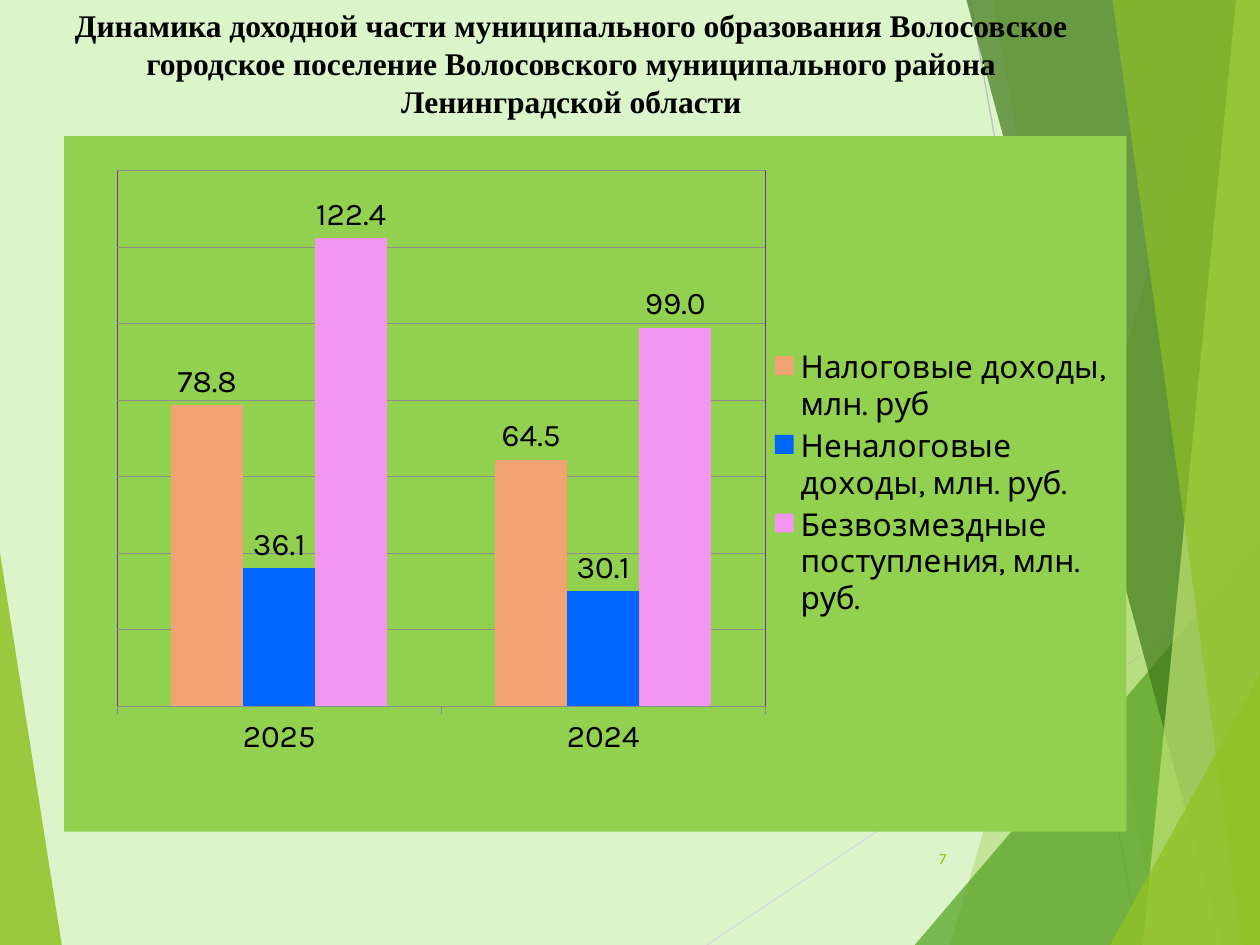
from lxml import etree
from pptx import Presentation
from pptx import util as u
from pptx.chart import data as cd
from pptx.dml.color import RGBColor
from pptx.enum import chart as ch, shapes as sh, text as tx
from pptx.oxml import ns

# Content
TITLE = ("Динамика доходной части муниципального образования Волосовское "
         "городское поселение Волосовского муниципального района "
         "Ленинградской области")
PAGE = "7"
YEARS = ["2025", "2024"]
SERIES = [
    ("Налоговые доходы, млн. руб", (78.8, 64.5), "F1A374"),
    ("Неналоговые доходы, млн. руб.", (36.1, 30.1), "0066FF"),
    ("Безвозмездные поступления, млн. руб.", (122.4, 99), "F296F2"),
]

THEME = {
    "back": "DBF4CA", "panel": "92D050", "ink": "000000", "lime": "90C226",
    "grid": "8C8C8C", "edge": "7030A0",
    "head": "Times New Roman", "body": "Karla",
    "big": 18, "small": 9,
}

# Backdrop: colour, opacity in percent, corners
W, H = 10, 7.5
WEDGE = (THEME["lime"], 85, [(0, 4.39), (0.49, H), (0, H)])
RAYS = [("D9D9D9", (5.61, H), (W, 4.57)), ("BFBFBF", (7.7, 0), (9.04, H))]
BANDS = [
    (THEME["lime"], 30, [(9.75, 0), (7.54, H), (W, H), (W, 0)]),
    (THEME["lime"], 20, [(7.88, 0), (9.19, H), (W, H), (W, 0)]),
    ("54A021", 72, [(7.26, H), (W, 4.29), (W, H)]),
    ("3F7819", 70, [(7.67, 0), (9.7, H), (W, H), (W, 0)]),
    ("C0E474", 70, [(9.81, 0), (9.07, H), (W, H), (W, 0)]),
    (THEME["lime"], 65, [(8.83, 0), (9.86, H), (W, H), (W, 0)]),
    (THEME["lime"], 80, [(8.81, H), (W, 5.35), (W, H)]),
]


def rgb(code):
    return RGBColor.from_string(code)


def paint(fill, code):
    fill.solid()
    fill.fore_color.rgb = rgb(code)


def style(font, size, code, face, bold=False):
    font.size, font.name, font.bold = u.Pt(size), face, bold
    font.color.rgb = rgb(code)


def add_band(slide, code, alpha, spots):
    pts = [(u.Inches(x), u.Inches(y)) for x, y in spots]
    path = slide.shapes.build_freeform(*pts[0])
    path.add_line_segments(pts[1:], close=True)
    band = path.convert_to_shape()
    band.shadow.inherit = False
    paint(band.fill, code)
    band.line.fill.background()
    tint = band.fill._xPr.find(".//" + ns.qn("a:srgbClr"))
    etree.SubElement(tint, ns.qn("a:alpha"), val=str(alpha * 1000))


def add_ray(slide, code, start, end):
    ends = [u.Inches(n) for n in start + end]
    ray = slide.shapes.add_connector(sh.MSO_CONNECTOR.STRAIGHT, *ends)
    ray.line.color.rgb = rgb(code)
    ray.line.width = u.Pt(0.75)
    etree.SubElement(ray._element.spPr, ns.qn("a:effectLst"))


def add_text(slide, box, words, align, anchor, *look):
    frame = slide.shapes.add_textbox(*map(u.Inches, box)).text_frame
    frame.word_wrap = True
    frame.vertical_anchor = anchor
    para = frame.paragraphs[0]
    para.alignment = align
    run = para.add_run()
    run.text = words
    style(run.font, *look)


def add_layout(x, y, w, h, inner=False):
    lay = etree.Element(ns.qn("c:layout"))
    man = etree.SubElement(lay, ns.qn("c:manualLayout"))
    parts = [("layoutTarget", "inner")] if inner else []
    parts += [("xMode", "edge"), ("yMode", "edge"),
              ("x", x), ("y", y), ("w", w), ("h", h)]
    for tag, val in parts:
        etree.SubElement(man, ns.qn("c:" + tag), val=str(val))
    return lay


def add_props(fill, edge=None):
    props = etree.Element(ns.qn("c:spPr"))
    solid = etree.SubElement(props, ns.qn("a:solidFill"))
    etree.SubElement(solid, ns.qn("a:srgbClr"), val=fill)
    line = etree.SubElement(props, ns.qn("a:ln"), w="9525")
    if edge:
        solid = etree.SubElement(line, ns.qn("a:solidFill"))
        etree.SubElement(solid, ns.qn("a:srgbClr"), val=edge)
    else:
        etree.SubElement(line, ns.qn("a:noFill"))
    return props


def add_chart(slide):
    data = cd.CategoryChartData(number_format="#,##0.0")
    data.categories = YEARS
    for name, vals, _ in SERIES:
        data.add_series(name, vals)
    box = map(u.Inches, (0.51, 1.08, 8.43, 5.52))
    chart = slide.shapes.add_chart(
        ch.XL_CHART_TYPE.COLUMN_CLUSTERED, *box, data).chart
    look = (THEME["big"], THEME["ink"], THEME["body"])
    style(chart.font, *look)
    chart.has_title = False

    # Columns and their values
    plot = chart.plots[0]
    plot.gap_width, plot.overlap = 150, 0
    plot.vary_by_categories = False
    for ser, (_, _, code) in zip(plot.series, SERIES):
        paint(ser.format.fill, code)
        tags = ser.data_labels
        tags.show_value = True
        tags.number_format = "#,##0.0"
        tags.number_format_is_linked = False
        tags.position = ch.XL_LABEL_POSITION.OUTSIDE_END
        style(tags.font, *look)

    # Axes
    vert, base = chart.value_axis, chart.category_axis
    vert.minimum_scale, vert.maximum_scale, vert.major_unit = 0, 140, 20
    vert.visible = False
    vert.has_major_gridlines = True
    base.major_tick_mark = ch.XL_TICK_MARK.OUTSIDE
    for line in (vert.major_gridlines.format.line, base.format.line):
        line.color.rgb = rgb(THEME["grid"])
        line.width = u.Pt(0.75)

    # Legend
    chart.has_legend = True
    key = chart.legend
    key.position = ch.XL_LEGEND_POSITION.RIGHT
    key.include_in_layout = False
    style(key.font, *look)
    node = key._element
    for old in node.findall(ns.qn("c:layout")):
        node.remove(old)
    node.find(ns.qn("c:legendPos")).addnext(
        add_layout(0.66, 0.3, 0.33, 0.4))

    # Plot area and panel
    area = chart._chartSpace.chart.plotArea
    for old in area.findall(ns.qn("c:layout")):
        area.remove(old)
    area.insert(0, add_layout(0.05, 0.05, 0.61, 0.77, inner=True))
    area.append(add_props(THEME["panel"], THEME["edge"]))
    chart._chartSpace.chart.addnext(add_props(THEME["panel"]))


def main():
    deck = Presentation()
    deck.slide_width, deck.slide_height = u.Inches(W), u.Inches(H)
    slide = deck.slides.add_slide(deck.slide_layouts[6])
    paint(slide.background.fill, THEME["back"])

    # Backdrop
    add_band(slide, *WEDGE)
    for ray in RAYS:
        add_ray(slide, *ray)
    for band in BANDS:
        add_band(slide, *band)

    # Title, page number, chart
    add_text(slide, (0.2, 0, 8.67, 1.07), TITLE, tx.PP_ALIGN.CENTER,
             tx.MSO_ANCHOR.TOP, THEME["big"], THEME["ink"],
             THEME["head"], True)
    add_text(slide, (7.05, 6.61, 0.56, 0.4), PAGE, tx.PP_ALIGN.RIGHT,
             tx.MSO_ANCHOR.MIDDLE, THEME["small"], THEME["lime"],
             THEME["body"])
    add_chart(slide)
    deck.save("out.pptx")


if __name__ == "__main__":
    main()
